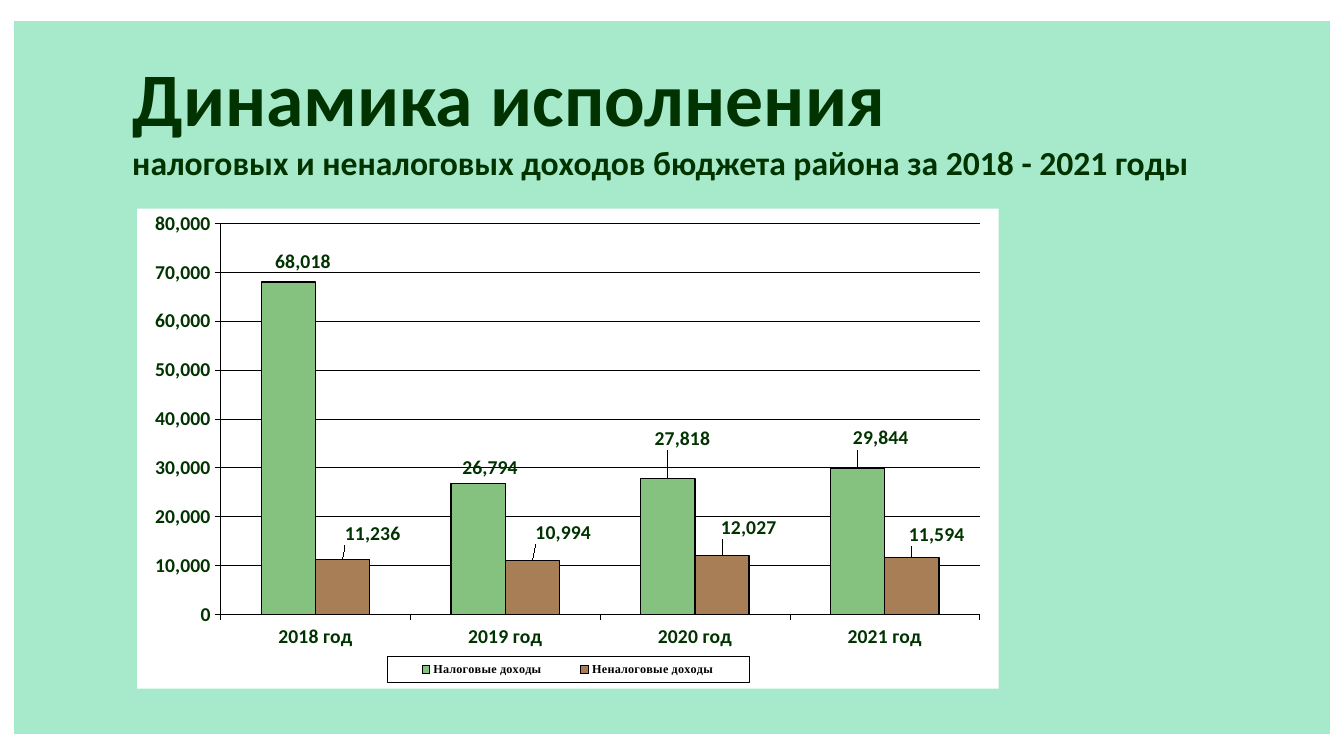
from lxml.etree import SubElement
from pptx import Presentation
from pptx.chart.data import CategoryChartData
from pptx.dml.color import RGBColor
from pptx.enum.chart import XL_CHART_TYPE, XL_LABEL_POSITION, XL_LEGEND_POSITION, XL_TICK_MARK
from pptx.enum.shapes import MSO_SHAPE
from pptx.oxml import parse_xml
from pptx.oxml.ns import nsdecls, qn
from pptx.util import Inches, Pt

YEARS = ["2018 год", "2019 год", "2020 год", "2021 год"]
SERIES = [
    ("Налоговые доходы", (68018, 26794, 27818, 29844), "85C27F",
     ((0.017, -0.01), (0.014, 0), (0.017, -0.05), (0.027, -0.03))),
    ("Неналоговые доходы", (11236, 10994, 12027, 11594), "A77E56",
     ((0.035, -0.02), (0.036, -0.025), (0.031, -0.025), (0.029, -0.015))),
]


def color(value):
    return RGBColor.from_string(value)


def set_font(font, size, value="003300", name="Calibri", bold=True):
    font.size, font.name, font.bold = Pt(size), name, bold
    font.color.rgb = color(value)


def set_line(line, width, value="000000"):
    line.color.rgb = color(value)
    line.width = Pt(width)


def write(paragraph, text, **style):
    run = paragraph.add_run()
    run.text = text
    set_font(run.font, **style)


def place(element, after, inner=False, edge=True, **shares):
    for existing in element.findall(qn("c:layout")):
        element.remove(existing)
    layout = parse_xml(f"<c:layout {nsdecls('c')}><c:manualLayout/></c:layout>")
    manual = layout[0]
    if inner:
        SubElement(manual, qn("c:layoutTarget")).set("val", "inner")
    if edge:
        for mode in ("xMode", "yMode"):
            SubElement(manual, qn(f"c:{mode}")).set("val", "edge")
    for tag, share in shares.items():
        SubElement(manual, qn(f"c:{tag}")).set("val", str(share))
    if after is None:
        element.insert(0, layout)
    else:
        after.addnext(layout)


def white_box(outline):
    return parse_xml(
        f"<c:spPr {nsdecls('c', 'a')}><a:solidFill><a:srgbClr val='FFFFFF'/></a:solidFill>"
        f"<a:ln w='3175'>{outline}</a:ln></c:spPr>")


class BudgetSlide:
    def __init__(self, presentation):
        self.width = presentation.slide_width
        self.height = presentation.slide_height
        self.slide = presentation.slides.add_slide(presentation.slide_layouts[6])

    def box(self, left, top, width, height):
        return (int(left * self.width), int(top * self.height),
                int(width * self.width), int(height * self.height))

    def panel(self, *shares, fill):
        shape = self.slide.shapes.add_shape(MSO_SHAPE.RECTANGLE, *self.box(*shares))
        shape.shadow.inherit = False
        shape.fill.solid()
        shape.fill.fore_color.rgb = color(fill)
        shape.line.fill.background()

    def heading(self, *shares, lines):
        frame = self.slide.shapes.add_textbox(*self.box(*shares)).text_frame
        frame.word_wrap = True
        for index, (text, size) in enumerate(lines):
            paragraph = frame.add_paragraph() if index else frame.paragraphs[0]
            write(paragraph, text, size=size)

    def column_chart(self, *shares):
        data = CategoryChartData(number_format="#,##0")
        data.categories = YEARS
        for name, values, _, _ in SERIES:
            data.add_series(name, values)
        chart = self.slide.shapes.add_chart(
            XL_CHART_TYPE.COLUMN_CLUSTERED, *self.box(*shares), data).chart
        chart.has_title = False
        set_font(chart.font, 8, "000000", "Arial", False)
        plot = chart.plots[0]
        plot.gap_width, plot.overlap, plot.vary_by_categories = 150, 0, False
        self.axes(chart)
        for series, (_, _, fill, offsets) in zip(plot.series, SERIES):
            self.columns(series, fill, offsets)
        self.legend(chart)
        plot_area = chart.element.xpath("c:chart/c:plotArea")[0]
        place(plot_area, None, inner=True, x=0.097, y=0.031, w=0.881, h=0.814)
        chart.element.find(qn("c:chart")).addnext(white_box("<a:noFill/>"))

    def axes(self, chart):
        for axis in (chart.category_axis, chart.value_axis):
            axis.major_tick_mark = XL_TICK_MARK.OUTSIDE
            axis.minor_tick_mark = XL_TICK_MARK.NONE
            set_font(axis.tick_labels.font, 14)
            set_line(axis.format.line, 0.25)
        values = chart.value_axis
        values.minimum_scale, values.maximum_scale, values.major_unit = 0, 80000, 10000
        values.tick_labels.number_format = "#,##0"
        values.tick_labels.number_format_is_linked = False
        set_line(values.major_gridlines.format.line, 0.25)

    def columns(self, series, fill, offsets):
        series.format.fill.solid()
        series.format.fill.fore_color.rgb = color(fill)
        set_line(series.format.line, 1)
        labels = series.data_labels
        labels.show_value = True
        labels.number_format = "#,##0"
        labels.number_format_is_linked = False
        labels.position = XL_LABEL_POSITION.OUTSIDE_END
        set_font(labels.font, 14)
        for index, (across, down) in enumerate(offsets):
            label = series.points[index].data_label
            label.position = XL_LABEL_POSITION.OUTSIDE_END
            set_font(label.font, 14)
        for element, (across, down) in zip(labels._element.findall(qn("c:dLbl")), offsets):
            place(element, element.find(qn("c:idx")), edge=False, x=across, y=down)

    def legend(self, chart):
        chart.has_legend = True
        legend = chart.legend
        legend.position = XL_LEGEND_POSITION.BOTTOM
        legend.include_in_layout = False
        set_font(legend.font, 8.7, "000000", "Times New Roman")
        element = chart.element.xpath("c:chart/c:legend")[0]
        place(element, element.find(qn("c:legendPos")), x=0.29, y=0.933, w=0.42, h=0.054)
        outline = "<a:solidFill><a:srgbClr val='000000'/></a:solidFill>"
        element.find(qn("c:overlay")).addnext(white_box(outline))


def main():
    presentation = Presentation()
    presentation.slide_width, presentation.slide_height = Inches(13.33), Inches(7.5)
    budget = BudgetSlide(presentation)
    budget.panel(0.0105, 0.028, 0.979, 0.943, fill="A7EACB")
    budget.heading(0.091, 0.061, 0.813, 0.193, lines=[
        ("Динамика исполнения", 54),
        ("налоговых и неналоговых доходов бюджета района за 2018 - 2021 годы", 24)])
    budget.column_chart(0.102, 0.276, 0.641, 0.635)
    presentation.save("out.pptx")


if __name__ == "__main__":
    main()
